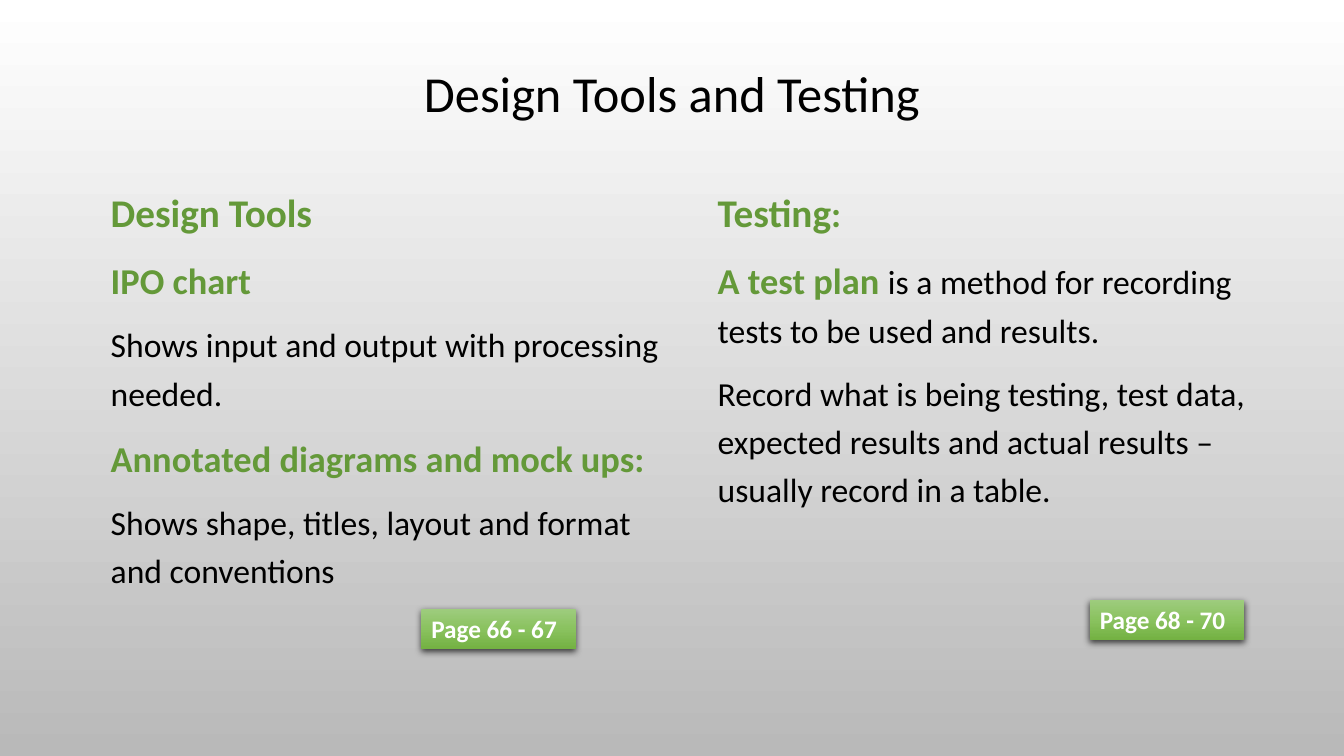
import copy

import lxml.etree
import pptx
import pptx.dml.color
import pptx.enum.shapes
import pptx.enum.text
import pptx.oxml
import pptx.oxml.ns
import pptx.util
from pptx.util import Inches

theme = {
    "font": "Calibri",
    "black": "000000",
    "white": "FFFFFF",
    "green": "649939",
    "background": ["FFFFFF", "B9B9B9"],
    "badge": ["9ECC7E", "8AC25F", "73B142"],
    "title": 36,
    "heading": 28,
    "term": 26,
    "body": 24,
    "page": 18,
}


def style_span(span, size, color, bold=False):
    span.font.name = theme["font"]
    span.font.size = pptx.util.Pt(size)
    span.font.bold = bold
    span.font.color.rgb = pptx.dml.color.RGBColor.from_string(color)


def fill_downward(fill, colors):
    fill.gradient()
    fill.gradient_angle = 270
    stops = fill.gradient_stops
    first = stops[0]._gs
    for extra in range(len(colors) - len(stops)):
        first.addnext(copy.deepcopy(first))
    for index, (stop, color) in enumerate(zip(fill.gradient_stops, colors)):
        stop.position = index / (len(colors) - 1)
        stop.color.rgb = pptx.dml.color.RGBColor.from_string(color)


deck = pptx.Presentation()
deck.slide_width = Inches(13.33)
deck.slide_height = Inches(7.5)
page = deck.slides.add_slide(deck.slide_layouts[6])
fill_downward(page.background.fill, theme["background"])

title = page.shapes.add_textbox(Inches(1), Inches(0.44), Inches(11.33), Inches(1.02))
title.text_frame.word_wrap = True
title.text_frame.vertical_anchor = pptx.enum.text.MSO_ANCHOR.MIDDLE
title.text_frame.text = "Design Tools and Testing"
para = title.text_frame.paragraphs[0]
para.alignment = pptx.enum.text.PP_ALIGN.CENTER
para.line_spacing = 0.9
style_span(para.runs[0], theme["title"], theme["black"])

styles = {
    "heading": (theme["heading"], theme["green"], True),
    "term": (theme["term"], theme["green"], True),
    "body": (theme["body"], theme["black"], False),
}
columns = [
    (1, 5.49, [
        [("Design Tools", "heading")],
        [("IPO chart", "term")],
        [("Shows input and output with processing needed.", "body")],
        [("Annotated diagrams and mock ups:", "term")],
        [("Shows shape, titles, layout and format and conventions", "body")],
    ]),
    (7.02, 5.04, [
        [("Testing", "heading"), (":", "term")],
        [("A test plan ", "term"),
         ("is a method for recording tests to be used and results.", "body")],
        [("Record what is being testing, test data, expected results and "
          "actual results – usually record in a table.", "body")],
    ]),
]
for left, height, paragraphs in columns:
    box = page.shapes.add_textbox(Inches(left), Inches(1.73), Inches(5.67), Inches(height))
    box.text_frame.word_wrap = True
    for index, parts in enumerate(paragraphs):
        para = box.text_frame.add_paragraph() if index else box.text_frame.paragraphs[0]
        para.line_spacing = 1.2
        para.space_before = pptx.util.Pt(10 if index else 0)
        for text, style in parts:
            span = para.add_run()
            span.text = text
            style_span(span, *styles[style])

badges = [(4.18, 6.04, "Page 66 - 67"), (10.81, 5.95, "Page 68 - 70")]
for left, top, text in badges:
    badge = page.shapes.add_shape(
        pptx.enum.shapes.MSO_SHAPE.RECTANGLE,
        Inches(left), Inches(top), Inches(1.53), Inches(0.4))
    fill_downward(badge.fill, theme["badge"])
    badge.line.fill.background()
    badge.shadow.inherit = False
    effects = badge._element.spPr.find(pptx.oxml.ns.qn("a:effectLst"))
    shadow = lxml.etree.SubElement(
        effects, pptx.oxml.ns.qn("a:outerShdw"),
        blurRad=str(pptx.util.Pt(5)), dist=str(pptx.util.Pt(2)),
        dir="5400000", algn="ctr", rotWithShape="0")
    shade = lxml.etree.SubElement(shadow, pptx.oxml.ns.qn("a:srgbClr"), val=theme["black"])
    lxml.etree.SubElement(shade, pptx.oxml.ns.qn("a:alpha"), val="69000")
    badge.text_frame.word_wrap = True
    badge.text_frame.vertical_anchor = pptx.enum.text.MSO_ANCHOR.TOP
    badge.text_frame.text = text
    para = badge.text_frame.paragraphs[0]
    para.alignment = pptx.enum.text.PP_ALIGN.LEFT
    style_span(para.runs[0], theme["page"], theme["white"], True)

deck.save("out.pptx")
